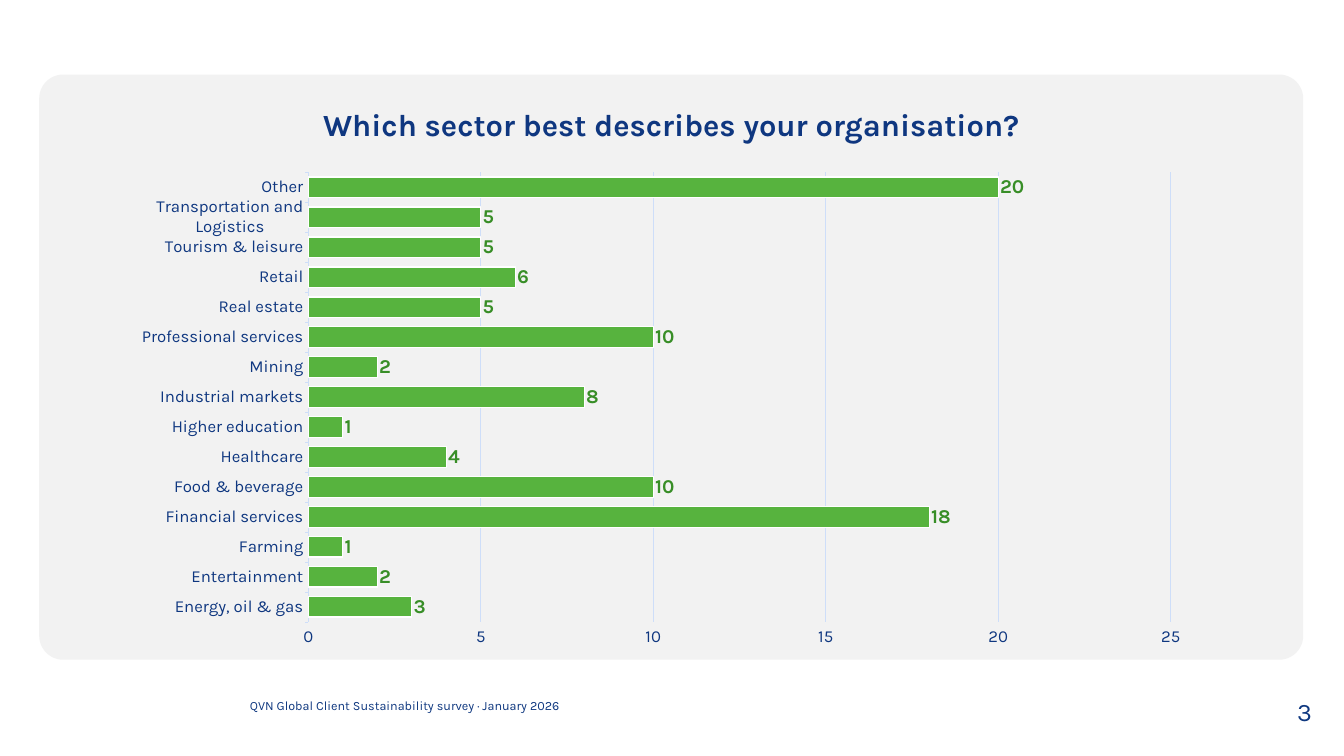
from lxml import etree
from pptx import Presentation
from pptx.chart.data import CategoryChartData
from pptx.dml.color import RGBColor
from pptx.enum.chart import XL_CHART_TYPE as CT, XL_LABEL_POSITION as LP, XL_TICK_MARK as TM
from pptx.enum.shapes import MSO_SHAPE as MS
from pptx.enum.text import MSO_ANCHOR as MA, PP_ALIGN as PA
from pptx.oxml import parse_xml
from pptx.oxml.ns import nsdecls, qn
from pptx.util import Pt

COLORS = {
    "panel": "F2F2F2", "navy": "0F3780", "footer": "0F3880", "grid": "CEDEF9",
    "bar": "57B33E", "value": "388E27", "white": "FFFFFF",
}
SECTORS = [
    ("Energy, oil & gas", 3), ("Entertainment", 2), ("Farming", 1),
    ("Financial services", 18), ("Food & beverage", 10), ("Healthcare", 4),
    ("Higher education", 1), ("Industrial markets", 8), ("Mining", 2),
    ("Professional services", 10), ("Real estate", 5), ("Retail", 6),
    ("Tourism & leisure", 5), ("Transportation and Logistics", 5), ("Other", 20),
]


class Deck:
    """Hold the style and the current slide, and add each kind of element."""

    font = "Karla"

    def __init__(self, width, height):
        self.prs = Presentation()
        self.prs.slide_width, self.prs.slide_height = Pt(width), Pt(height)
        self.s = None

    def add_slide(self):
        self.s = self.prs.slides.add_slide(self.prs.slide_layouts[5])

    def color(self, name):
        return RGBColor.from_string(COLORS[name])

    def style(self, font, size, color, bold=False):
        font.name, font.size, font.bold = self.font, Pt(size), bold
        font.color.rgb = self.color(color)

    def line(self, fmt, color, width):
        fmt.line.color.rgb = self.color(color)
        fmt.line.width = Pt(width)

    def panel(self, x, y, w, h, radius):
        sp = self.s.shapes.add_shape(MS.ROUNDED_RECTANGLE, Pt(x), Pt(y), Pt(w), Pt(h))
        sp.adjustments[0] = radius
        sp.shadow.inherit = False
        sp.fill.solid()
        sp.fill.fore_color.rgb = self.color("panel")
        sp.line.fill.background()

    def title(self, text, x, y, w, h, size):
        sp = self.s.shapes.title
        sp.left, sp.top, sp.width, sp.height = Pt(x), Pt(y), Pt(w), Pt(h)
        tf = sp.text_frame
        tf.text, tf.word_wrap, tf.vertical_anchor = text, True, MA.BOTTOM
        p = tf.paragraphs[0]
        p.alignment, p.line_spacing = PA.CENTER, 0.9
        self.style(p.runs[0].font, size, "navy", True)

    def text(self, text, x, y, w, h, size, align=PA.LEFT):
        tf = self.s.shapes.add_textbox(Pt(x), Pt(y), Pt(w), Pt(h)).text_frame
        tf.margin_left = tf.margin_right = tf.margin_top = tf.margin_bottom = 0
        tf.text, tf.word_wrap = text, True
        p = tf.paragraphs[0]
        p.alignment = align
        self.style(p.runs[0].font, size, "footer")

    def bar_chart(self, rows, x, y, w, h, plot_area):
        data = CategoryChartData()
        data.categories = [name for name, _ in rows]
        data.add_series("Series 1", [value for _, value in rows])
        chart = self.s.shapes.add_chart(
            CT.BAR_CLUSTERED, Pt(x), Pt(y), Pt(w), Pt(h), data).chart
        chart.has_legend = chart.has_title = False
        self.style(chart.font, 24, "navy")
        plot = chart.plots[0]
        plot.gap_width, plot.vary_by_categories = 49, False
        fmt = plot.series[0].format
        fmt.fill.solid()
        fmt.fill.fore_color.rgb = self.color("bar")
        self.line(fmt, "white", 1.5)
        plot.has_data_labels = True
        labels = plot.data_labels
        labels.show_value, labels.position = True, LP.OUTSIDE_END
        self.style(labels.font, 28, "value", True)
        cat, val = chart.category_axis, chart.value_axis
        for axis in (cat, val):
            axis.major_tick_mark, axis.minor_tick_mark = TM.OUTSIDE, TM.NONE
            self.style(axis.tick_labels.font, 24, "navy")
        self.line(cat.format, "grid", 0.75)
        cat.has_major_gridlines = False
        skip = etree.Element(qn("c:tickLblSkip"), val="2")
        cat._element.find(qn("c:noMultiLvlLbl")).addprevious(skip)
        val.minimum_scale, val.maximum_scale, val.major_unit = 0, 25, 5
        val.format.line.fill.background()
        val.has_major_gridlines = True
        self.line(val.major_gridlines.format, "grid", 0.75)
        self.place_plot(chart, plot_area)

    def place_plot(self, chart, plot_area):
        area = chart._chartSpace.chart.plotArea
        for old in area.findall(qn("c:layout")):
            area.remove(old)
        sizes = "".join(f'<c:{k} val="{v}"/>' for k, v in zip("xywh", plot_area))
        area.insert(0, parse_xml(
            f'<c:layout {nsdecls("c")}><c:manualLayout><c:layoutTarget val="inner"/>'
            f'<c:xMode val="edge"/><c:yMode val="edge"/>{sizes}'
            '</c:manualLayout></c:layout>'))


def main():
    deck = Deck(1920.24, 1080)
    deck.add_slide()
    deck.panel(56, 106.5, 1806, 836, 0.041)
    title = deck.s.shapes.title._element
    title.getparent().append(title)
    deck.title("Which sector best describes your organisation?", 368.5, 142, 1182, 66, 44)
    deck.bar_chart(SECTORS, 202.5, 232.5, 1515.5, 705.5, (0.155, 0.019, 0.815, 0.911))
    deck.text("QVN Global Client Sustainability survey · January 2026", 357, 996.5, 602.5, 26.5, 18)
    deck.text("3", 1825, 995, 78, 26.5, 36, PA.CENTER)
    deck.prs.save("out.pptx")


if __name__ == "__main__":
    main()
